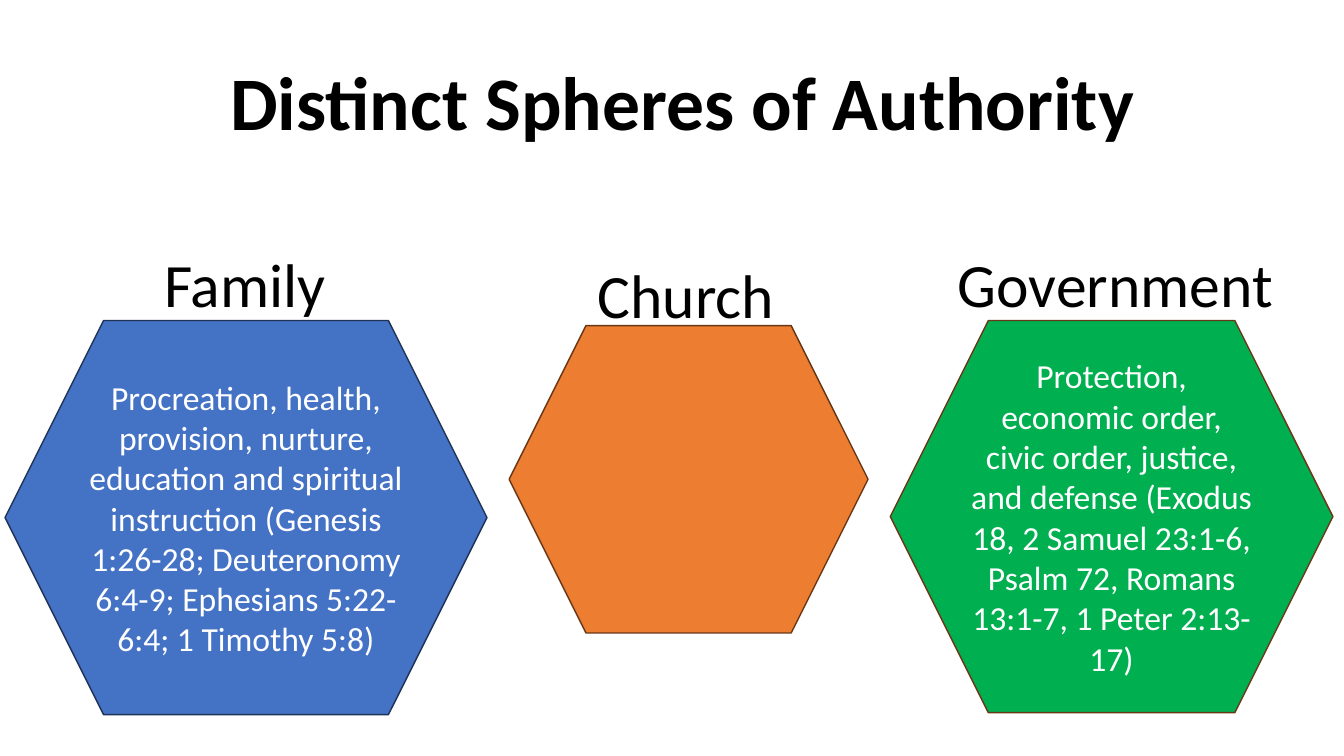
import pptx
import pptx.util
import pptx.dml.color
import pptx.enum.shapes
import pptx.enum.text

RGB = pptx.dml.color.RGBColor
BLACK = RGB(0x00, 0x00, 0x00)
WHITE = RGB(0xFF, 0xFF, 0xFF)
BLUE = RGB(0x44, 0x72, 0xC4)
NAVY = RGB(0x1E, 0x32, 0x56)
ORANGE = RGB(0xED, 0x7D, 0x31)
BROWN = RGB(0x68, 0x37, 0x15)
GREEN = RGB(0x00, 0xB0, 0x50)

SLIDE_SIZE = (13.33, 7.5)
HEADING = "Distinct Spheres of Authority"
HEADING_AREA = (1.4, 0.5, 10.74, 1.01)
LABEL_HEIGHT = 1.24

SPHERES = [
    {"name": "Family", "label": (1.53, 2.23, 2.21), "hexagon": (0.05, 3.18, 4.78, 3.91),
     "fill": BLUE, "outline": NAVY,
     "duties": "Procreation, health, provision, nurture, education and spiritual "
               "instruction (Genesis 1:26-28; Deuteronomy 6:4-9; "
               "Ephesians 5:22-6:4; 1 Timothy 5:8)"},
    {"name": "Church", "label": (5.83, 2.34, 2.21), "hexagon": (5.05, 3.23, 3.56, 3.05),
     "fill": ORANGE, "outline": BROWN, "duties": ""},
    {"name": "Government", "label": (9.4, 2.23, 3.49), "hexagon": (8.83, 3.18, 4.39, 3.89),
     "fill": GREEN, "outline": BROWN,
     "duties": "Protection, economic order, civic order, justice, and defense "
               "(Exodus 18, 2 Samuel 23:1-6, Psalm 72, Romans 13:1-7, "
               "1 Peter 2:13-17)"},
]


def inches(area):
    return [pptx.util.Inches(length) for length in area]


def write(shape, wording, size, color, align, anchor, bold=False, spacing=1.0):
    frame = shape.text_frame
    frame.word_wrap = True
    frame.vertical_anchor = anchor
    frame.text = wording
    paragraph = frame.paragraphs[0]
    paragraph.alignment = align
    paragraph.line_spacing = spacing
    for run in paragraph.runs:
        run.font.name = "Calibri"
        run.font.size = pptx.util.Pt(size)
        run.font.bold = bold
        run.font.color.rgb = color


def add_label(slide, sphere):
    label = slide.shapes.add_textbox(*inches((*sphere["label"], LABEL_HEIGHT)))
    write(label, sphere["name"], 44, BLACK, ALIGN.LEFT, ANCHOR.MIDDLE, spacing=0.9)


def add_hexagon(slide, sphere):
    hexagon = slide.shapes.add_shape(
        pptx.enum.shapes.MSO_SHAPE.HEXAGON, *inches(sphere["hexagon"]))
    hexagon.shadow.inherit = False
    hexagon.fill.solid()
    hexagon.fill.fore_color.rgb = sphere["fill"]
    hexagon.line.color.rgb = sphere["outline"]
    hexagon.line.width = pptx.util.Pt(1)
    if sphere["duties"]:
        write(hexagon, sphere["duties"], 24, WHITE, ALIGN.CENTER, ANCHOR.MIDDLE)


ALIGN = pptx.enum.text.PP_ALIGN
ANCHOR = pptx.enum.text.MSO_ANCHOR

deck = pptx.Presentation()
deck.slide_width, deck.slide_height = inches(SLIDE_SIZE)
slide = deck.slides.add_slide(deck.slide_layouts[6])

for sphere in SPHERES:
    add_label(slide, sphere)
for sphere in SPHERES:
    add_hexagon(slide, sphere)

heading = slide.shapes.add_textbox(*inches(HEADING_AREA))
write(heading, HEADING, 54, BLACK, ALIGN.CENTER, ANCHOR.TOP, bold=True)
heading.text_frame.auto_size = pptx.enum.text.MSO_AUTO_SIZE.SHAPE_TO_FIT_TEXT

deck.save("out.pptx")
